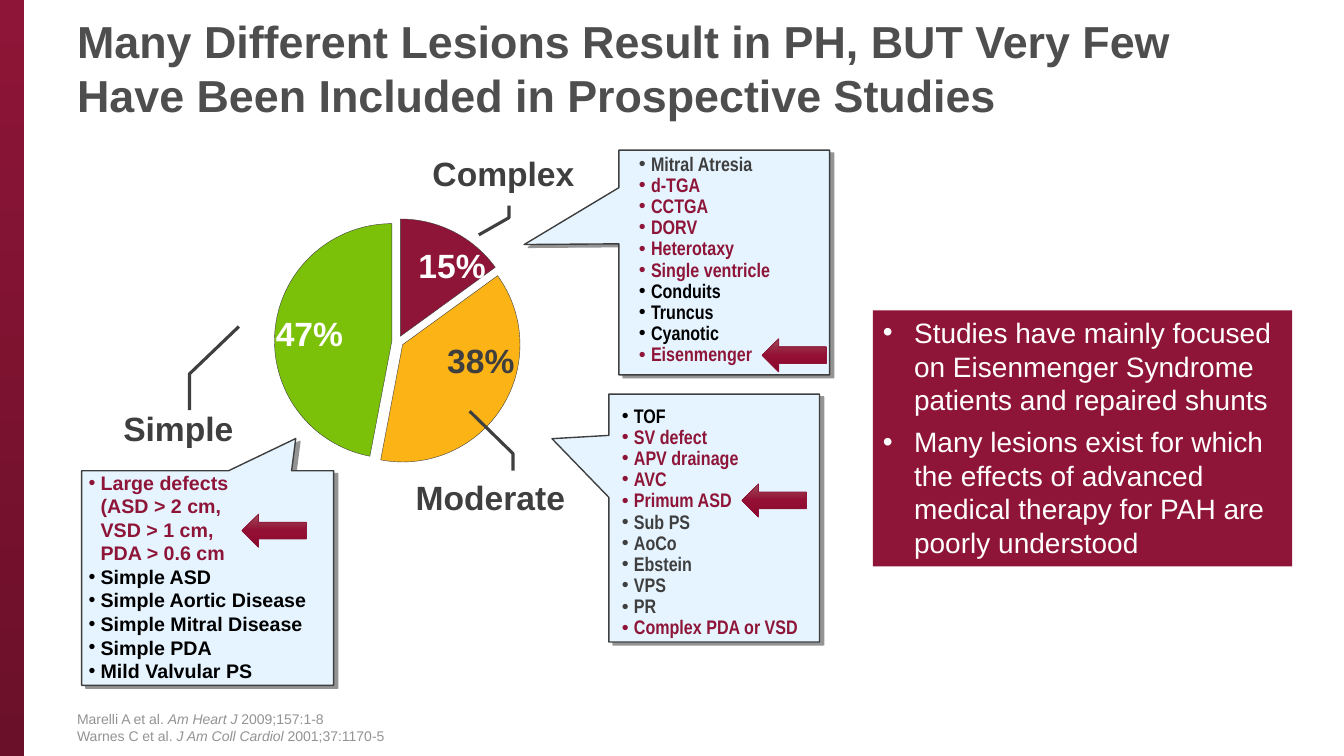
from lxml import etree
from pptx import Presentation
from pptx.chart.data import CategoryChartData
from pptx.dml.color import RGBColor
from pptx.enum.chart import XL_CHART_TYPE
from pptx.enum.shapes import MSO_SHAPE
from pptx.enum.text import MSO_ANCHOR, PP_ALIGN
from pptx.oxml import parse_xml
from pptx.oxml.ns import nsdecls, qn
from pptx.util import Emu, Inches, Pt

RECTANGLE = MSO_SHAPE.RECTANGLE
CALLOUT = MSO_SHAPE.RECTANGULAR_CALLOUT
LEFT_ARROW = MSO_SHAPE.LEFT_ARROW
PIE = XL_CHART_TYPE.PIE
TOP, MIDDLE, BOTTOM = MSO_ANCHOR.TOP, MSO_ANCHOR.MIDDLE, MSO_ANCHOR.BOTTOM
LEFT, CENTER = PP_ALIGN.LEFT, PP_ALIGN.CENTER

WIDTH, HEIGHT = Inches(13.33), Inches(7.5)
COLUMNS, ROWS = 80, 45
COLORS = {"crimson": "8E1537", "wine": "6B1029", "title": "4D4E4D", "ink": "3F3F3F",
          "black": "000000", "white": "FFFFFF", "pale": "E5F4FF", "shadow": "949494",
          "amber": "FCB315", "green": "7CC109", "grey": "939393",
          "rose": "9C4C59", "ruby": "940F34", "garnet": "89082C"}
ARROW_SIZE = (3.84, 1.98)


def rgb(name):
    return RGBColor.from_string(COLORS[name])


def grid(x, y):
    return Emu(round(x * WIDTH / COLUMNS)), Emu(round(y * HEIGHT / ROWS))


def within(box, offset, size):
    return box[0] + offset[0], box[1] + offset[1], *size


def add_block(slide, kind, box, fill=None, line=None, line_width=1):
    shape = slide.shapes.add_shape(kind, *grid(*box[:2]), *grid(*box[2:]))
    shape.shadow.inherit = False
    if fill:
        shape.fill.solid()
        shape.fill.fore_color.rgb = rgb(fill)
    if line:
        shape.line.color.rgb = rgb(line)
        shape.line.width = Pt(line_width)
    else:
        shape.line.fill.background()
    return shape


def fill_downwards(shape, names):
    shape.fill.gradient()
    shape.fill.gradient_angle = 270
    stops = shape.element.spPr.find(qn("a:gradFill")).find(qn("a:gsLst"))
    for stop in list(stops):
        stops.remove(stop)
    for index, name in enumerate(names):
        stop = etree.SubElement(stops, qn("a:gs"), pos=str(index * 100000 // (len(names) - 1)))
        etree.SubElement(stop, qn("a:srgbClr"), val=COLORS[name])


def add_run(paragraph, text, size, color, bold=False, italic=False, font="Arial"):
    run = paragraph.add_run()
    run.text = text
    run.font.name, run.font.size = font, Pt(size)
    run.font.bold, run.font.italic = bold, italic
    run.font.color.rgb = rgb(color)


def add_bullet(paragraph, indent):
    properties = paragraph._p.get_or_add_pPr()
    properties.set("marL", str(Inches(indent)))
    properties.set("indent", str(-Inches(indent)))
    etree.SubElement(properties, qn("a:buFont"), typeface="Arial")
    etree.SubElement(properties, qn("a:buChar"), char="•")


def paragraphs_of(frame, count):
    return [frame.paragraphs[0]] + [frame.add_paragraph() for _ in range(count - 1)]


def add_frame(slide, box, anchor=TOP):
    frame = slide.shapes.add_textbox(*grid(*box[:2]), *grid(*box[2:])).text_frame
    frame.word_wrap = True
    frame.vertical_anchor = anchor
    return frame


def add_label(slide, box, text, size, color, anchor=MIDDLE, alignment=CENTER):
    paragraph = add_frame(slide, box, anchor).paragraphs[0]
    paragraph.alignment = alignment
    add_run(paragraph, text, size, color, bold=True)


def add_arrow(slide, box):
    arrow = add_block(slide, LEFT_ARROW, box, line="crimson", line_width=0.5)
    fill_downwards(arrow, ["rose", "ruby", "garnet"])


def add_sidebar(slide, box):
    fill_downwards(add_block(slide, RECTANGLE, box), ["crimson", "wine"])


def add_lesion_callout(slide, box, tip, text_offset, text_size, arrow_offset, groups,
                       font="Arial Narrow", spacing=0.9):
    callout = add_block(slide, CALLOUT, box, "pale", "ink")
    callout.adjustments[0], callout.adjustments[1] = tip
    effects = callout.element.spPr.find(qn("a:effectLst"))
    shadow = etree.SubElement(effects, qn("a:outerShdw"), dist=str(Pt(3.6)),
                              dir=str(34 * 60000), algn="ctr", rotWithShape="0")
    etree.SubElement(shadow, qn("a:srgbClr"), val=COLORS["shadow"])

    lesions = [(lesion, color) for color, names in groups for lesion in names]
    frame = add_frame(slide, within(box, text_offset, text_size))
    for paragraph, (lesion, color) in zip(paragraphs_of(frame, len(lesions)), lesions):
        paragraph.line_spacing = spacing
        add_bullet(paragraph, 0.12)
        for index, line in enumerate(lesion.split("\n")):
            if index:
                paragraph.add_line_break()
            add_run(paragraph, line, 14, color, bold=True, font=font)
    add_arrow(slide, within(box, arrow_offset, ARROW_SIZE))


def add_severity_pie(slide, box):
    data = CategoryChartData()
    data.categories = ["1", "2", "3"]
    data.add_series("Series 1", (15, 38, 47))
    chart = slide.shapes.add_chart(PIE, *grid(*box[:2]), *grid(*box[2:]), data).chart
    chart.has_legend = chart.has_title = False
    chart.font.name, chart.font.size, chart.font.bold = "Lato", Pt(4.1), True
    chart.font.color.rgb = rgb("ink")
    plot = chart.plots[0]
    plot.vary_by_categories = True
    series = plot.series[0]
    series.format.line.color.rgb = rgb("ink")
    for index, color in enumerate(["crimson", "amber", "green"]):
        style = series.points[index].format
        style.fill.solid()
        style.fill.fore_color.rgb = rgb(color)
        style.line.color.rgb = rgb("ink")
        style.line.width = Pt(0.29)
    explosion = parse_xml(f'<c:explosion {nsdecls("c")} val="5"/>')
    series._element.find(qn("c:spPr")).addnext(explosion)

    area = chart._chartSpace.chart.plotArea
    for layout in area.findall(qn("c:layout")):
        area.remove(layout)
    layout = etree.Element(qn("c:layout"))
    manual = etree.SubElement(layout, qn("c:manualLayout"))
    for tag, value in [("layoutTarget", "inner"), ("xMode", "edge"), ("yMode", "edge"),
                       ("x", "0.173"), ("y", "0.09"), ("w", "0.656"), ("h", "0.826")]:
        etree.SubElement(manual, qn(f"c:{tag}"), val=value)
    area.insert(0, layout)

    for text, color, offset, size in [
            ("15%", "white", (19.14, 3.3), (5.7, 2.1)),
            ("47%", "white", (10.44, 6.96), (6.12, 2.94)),
            ("38%", "ink", (20.46, 8.58), (6.48, 2.94)),
            ("Complex", "ink", (19.2, -2.7), (11.7, 3.24)),
            ("Simple", "ink", (0.96, 12.48), (9.48, 3.24)),
            ("Moderate", "ink", (18, 16.56), (12.54, 3.24))]:
        add_label(slide, within(box, offset, size), text, 24, color)
    for leader in [((25.38, 0.84), (25.38, 1.56), (23.58, 2.58)),
                   ((6.36, 13.02), (6.36, 10.86), (9.3, 8.04)),
                   ((25.62, 16.62), (25.62, 15.6), (23.04, 13.08))]:
        start, *bends = [grid(box[0] + x, box[1] + y) for x, y in leader]
        builder = slide.shapes.build_freeform(*start)
        builder.add_line_segments(bends, close=False)
        line = builder.convert_to_shape()
        line.shadow.inherit = False
        line.fill.background()
        line.line.color.rgb = rgb("ink")
        line.line.width = Pt(2.25)


def add_takeaways(slide, box, messages):
    frame = add_block(slide, RECTANGLE, box, "crimson").text_frame
    frame.word_wrap = True
    frame.vertical_anchor = TOP
    for paragraph, message in zip(paragraphs_of(frame, len(messages)), messages):
        paragraph.alignment = LEFT
        paragraph.space_after = Pt(6)
        add_bullet(paragraph, 0.31)
        add_run(paragraph, message, 20, "white")


def add_references(slide, box, references):
    frame = add_frame(slide, box, BOTTOM)
    for paragraph, parts in zip(paragraphs_of(frame, len(references)), references):
        for index, part in enumerate(parts):
            add_run(paragraph, part, 10, "grey", italic=index == 1)


def main():
    presentation = Presentation()
    presentation.slide_width, presentation.slide_height = WIDTH, HEIGHT
    slide = presentation.slides.add_slide(presentation.slide_layouts[6])
    add_sidebar(slide, (0, 0, 1.44, ROWS))
    add_label(slide, (4, 0.12, 70.5, 7.8),
              "Many Different Lesions Result in PH, BUT Very Few Have Been Included "
              "in Prospective Studies", 32, "title", alignment=LEFT)
    add_lesion_callout(
        slide, (4.86, 28.02, 15, 12.78), (0.35, -0.65), (-0.18, -0.3), (17.82, 13.32), (9.54, 2.58),
        [("crimson", ["Large defects \n(ASD > 2 cm, \nVSD > 1 cm, \nPDA > 0.6 cm"]),
         ("black", ["Simple ASD", "Simple Aortic Disease", "Simple Mitral Disease",
                    "Simple PDA", "Mild Valvular PS"])], font="Arial", spacing=1.0)
    add_severity_pie(slide, (4.92, 11.4, 37.44, 17.76))
    add_lesion_callout(
        slide, (36.84, 8.94, 12.54, 13.38), (-0.95, -0.08), (0.6, -0.06), (10.2, 13.32), (8.52, 11.22),
        [("ink", ["Mitral Atresia"]),
         ("crimson", ["d-TGA", "CCTGA", "DORV", "Heterotaxy", "Single ventricle"]),
         ("black", ["Conduits", "Truncus", "Cyanotic"]), ("crimson", ["Eisenmenger"])])
    add_lesion_callout(
        slide, (36.24, 23.46, 12.54, 14.76), (-0.77, -0.32), (0.18, 0.42), (13.74, 14.58), (7.92, 5.34),
        [("black", ["TOF"]), ("crimson", ["SV defect", "APV drainage", "AVC", "Primum ASD"]),
         ("ink", ["Sub PS", "AoCo", "Ebstein", "VPS", "PR"]), ("crimson", ["Complex PDA or VSD"])])
    add_takeaways(slide, (51.96, 18.48, 24.96, 15.24), [
        "Studies have mainly focused on Eisenmenger Syndrome patients and repaired shunts",
        "Many lesions exist for which the effects of advanced medical therapy for PAH are "
        "poorly understood"])
    add_references(slide, (4, 41.7, 70.5, 2.88), [
        ("Marelli A et al. ", "Am Heart J ", "2009;157:1-8"),
        ("Warnes C et al. ", "J Am Coll Cardiol ", "2001;37:1170-5")])
    presentation.save("out.pptx")


if __name__ == "__main__":
    main()
